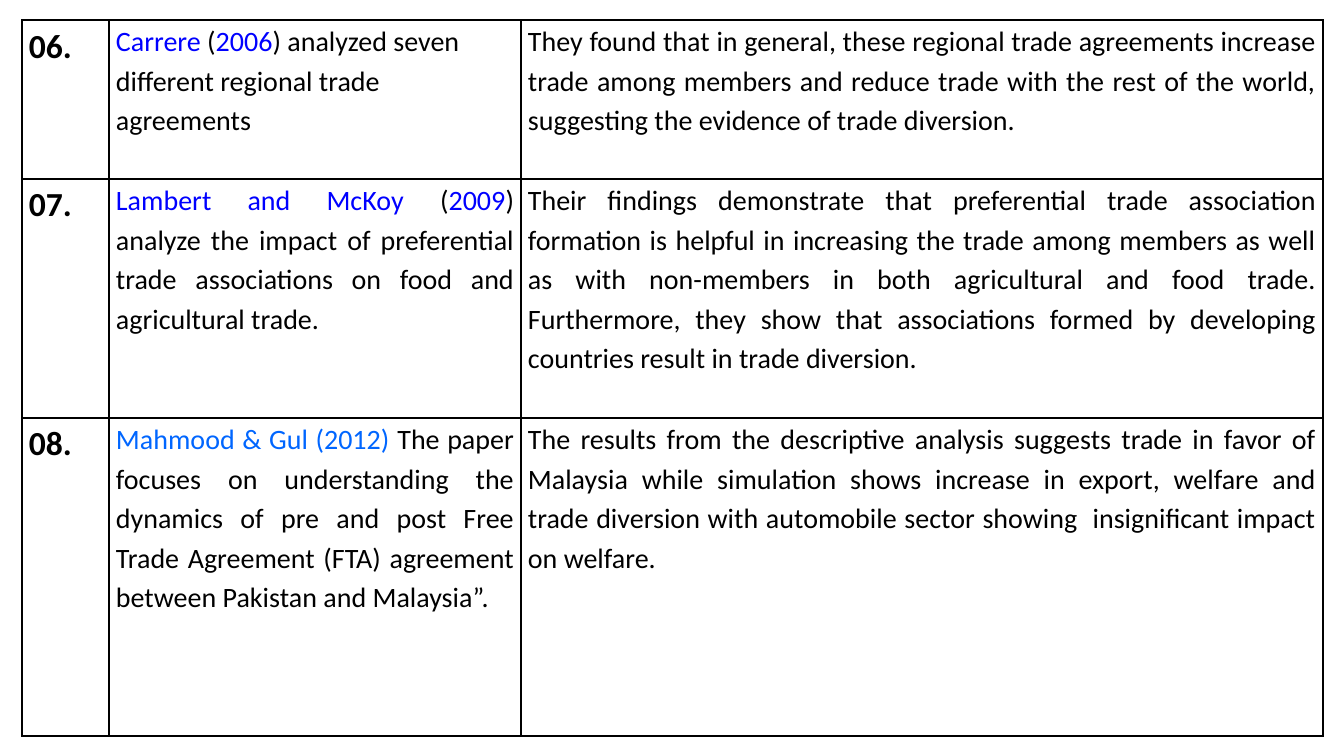
from lxml.etree import SubElement
from pptx import Presentation
from pptx.dml.color import RGBColor
from pptx.enum.text import PP_ALIGN
from pptx.oxml.ns import qn
from pptx.util import Pt

SCALE = 914400 / 100.8
HUES = {"black": "000000", "blue": "0000FF", "sky": "0066FF"}


def px(n):
    return round(n * SCALE)


def write(cell, runs, size=20, bold=False, align=PP_ALIGN.JUSTIFY):
    para = cell.text_frame.paragraphs[0]
    para.alignment = align
    para.line_spacing = 1.15
    for text, hue in runs:
        run = para.add_run()
        run.text = text
        font = run.font
        font.name = "Calibri"
        font.size = Pt(size)
        font.bold = bold
        font.color.rgb = RGBColor.from_string(HUES[hue])


studies = [
    ("06.", PP_ALIGN.LEFT,
     [("Carrere ", "blue"), ("(", "black"), ("2006", "blue"),
      (") analyzed seven different regional trade agreements", "black")],
     "They found that in general, these regional trade agreements increase "
     "trade among members and reduce trade with the rest of the world, "
     "suggesting the evidence of trade diversion."),
    ("07.", PP_ALIGN.JUSTIFY,
     [("Lambert and McKoy ", "blue"), ("(", "black"), ("2009", "blue"),
      (") analyze the impact of preferential trade associations on food and "
       "agricultural trade.", "black")],
     "Their findings demonstrate that preferential trade association "
     "formation is helpful in increasing the trade among members as well as "
     "with non-members in both agricultural and food trade. Furthermore, they "
     "show that associations formed by developing countries result in trade "
     "diversion."),
    ("08.", PP_ALIGN.JUSTIFY,
     [("Mahmood & Gul (2012) ", "sky"),
      ("The paper focuses on understanding the dynamics of pre and post Free "
       "Trade Agreement (FTA) agreement between Pakistan and Malaysia”.",
       "black")],
     "The results from the descriptive analysis suggests trade in favor of "
     "Malaysia while simulation shows increase in export, welfare and trade "
     "diversion with automobile sector showing  insignificant impact on "
     "welfare."),
]
widths = [87, 412, 802]
heights = [159, 239, 318]

deck = Presentation()
deck.slide_width = px(1344)
deck.slide_height = px(756)
slide = deck.slides.add_slide(deck.slide_layouts[6])

table = slide.shapes.add_table(
    len(heights), len(widths), px(22), px(20),
    px(sum(widths)), px(sum(heights))).table
table.first_row = False
table.horz_banding = False
for col, width in zip(table.columns, widths):
    col.width = px(width)
for row, height in zip(table.rows, heights):
    row.height = px(height)

for cell in table.iter_cells():
    cell.margin_left = cell.margin_right = px(7)
    cell.margin_top = cell.margin_bottom = 0
    props = cell._tc.get_or_add_tcPr()
    for side in ("lnL", "lnR", "lnT", "lnB"):
        line = SubElement(props, qn("a:" + side), w=str(Pt(1)))
        fill = SubElement(line, qn("a:solidFill"))
        SubElement(fill, qn("a:srgbClr"), val=HUES["black"])
    cell.fill.background()

for row, (label, align, study, result) in zip(table.rows, studies):
    number, paper, finding = row.cells
    write(number, [(label, "black")], size=24, bold=True, align=PP_ALIGN.LEFT)
    write(paper, study, align=align)
    write(finding, [(result, "black")])

deck.save("out.pptx")
